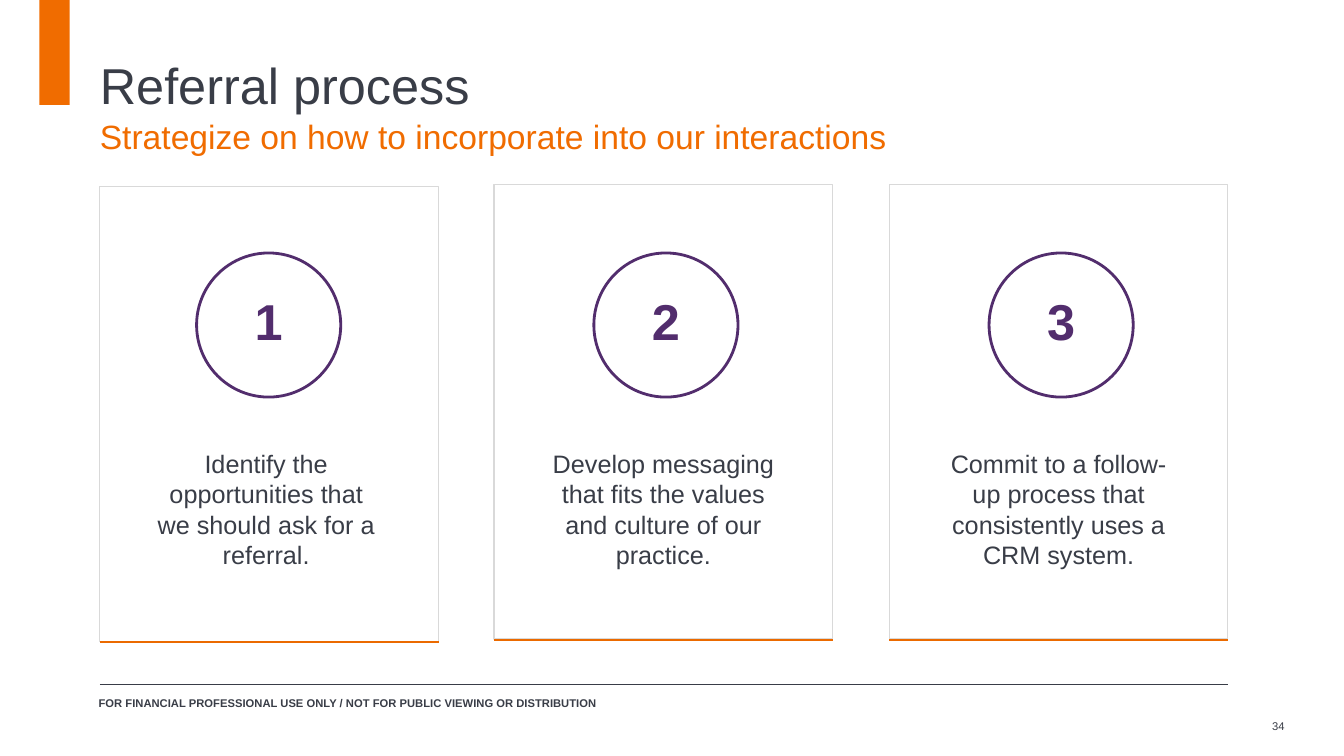
from pptx import Presentation
from pptx.dml.color import RGBColor
from pptx.enum.shapes import MSO_CONNECTOR, MSO_SHAPE
from pptx.enum.text import MSO_ANCHOR, PP_ALIGN
from pptx.oxml.ns import qn
from pptx.util import Emu, Pt
from lxml.etree import SubElement

PX = 9144
DARK, ORANGE, RULE_ORANGE = "393D47", "F06C00", "EB6A00"
PURPLE, GREY, WHITE = "522D6D", "D9D9D9", "FFFFFF"

STEPS = [
    (99, 185, 195, "Identify the opportunities that we should ask for a referral."),
    (490, 183, 589, "Develop messaging that fits the values and culture of our practice."),
    (882, 183, 981, "Commit to a follow-up process that consistently uses a CRM system."),
]


def px(*lengths):
    return [Emu(n * PX) for n in lengths]


def color(value):
    return RGBColor.from_string(value)


def add_box(s, kind, box, fill, line=None, width=0.75):
    sp = s.shapes.add_shape(kind, *px(*box))
    sp.shadow.inherit = False
    sp.fill.solid()
    sp.fill.fore_color.rgb = color(fill)
    if line:
        sp.line.color.rgb = color(line)
        sp.line.width = Pt(width)
    else:
        sp.line.fill.background()


def add_rule(s, left, right, y, line, width):
    sp = s.shapes.add_connector(MSO_CONNECTOR.STRAIGHT, *px(left, y, right, y))
    sp.line.color.rgb = color(line)
    sp.line.width = Pt(width)
    SubElement(sp._element.spPr, qn("a:effectLst"))


def add_text(s, box, text, size, fill=DARK, bold=False, align=PP_ALIGN.LEFT,
             anchor=MSO_ANCHOR.TOP, inset=(0, 0)):
    tf = s.shapes.add_textbox(*px(*box)).text_frame
    tf.word_wrap = True
    tf.vertical_anchor = anchor
    tf.margin_left = tf.margin_right = Emu(inset[0] * PX)
    tf.margin_top = tf.margin_bottom = Emu(inset[1] * PX)
    tf.text = text
    p = tf.paragraphs[0]
    p.alignment = align
    r = p.runs[0]
    r.font.name = "Arial"
    r.font.size = Pt(size)
    r.font.bold = bold
    r.font.color.rgb = color(fill)


def add_step(s, number, left, top, circle, text):
    add_box(s, MSO_SHAPE.RECTANGLE, (left, top, 336, 451), WHITE, GREY)
    add_rule(s, left, left + 336, top + 452, RULE_ORANGE, 2)
    add_box(s, MSO_SHAPE.OVAL, (circle, 251, 143, 143), WHITE, PURPLE, 2)
    add_text(s, (circle - 56, 440, 250, 131), text, 18,
             align=PP_ALIGN.CENTER, inset=(10, 5))
    add_text(s, (circle, 277, 143, 71), str(number), 36, PURPLE, True,
             PP_ALIGN.CENTER, MSO_ANCHOR.BOTTOM)


def main():
    prs = Presentation()
    prs.slide_width, prs.slide_height = px(1333, 750)
    s = prs.slides.add_slide(prs.slide_layouts[6])
    add_box(s, MSO_SHAPE.RECTANGLE, (39, 0, 30, 104), ORANGE)
    add_text(s, (99, 43, 1119, 71), "Referral process", 36,
             anchor=MSO_ANCHOR.BOTTOM)
    add_text(s, (99, 115, 1119, 39),
             "Strategize on how to incorporate into our interactions", 24, ORANGE)
    for number, step in enumerate(STEPS, 1):
        add_step(s, number, *step)
    add_rule(s, 99, 1218, 679, DARK, 0.5)
    add_text(s, (88, 686, 1147, 24),
             "FOR FINANCIAL PROFESSIONAL USE ONLY / NOT FOR PUBLIC VIEWING OR DISTRIBUTION",
             8, bold=True, inset=(10, 5))
    add_text(s, (1223, 700, 51, 40), "34", 8, align=PP_ALIGN.RIGHT,
             anchor=MSO_ANCHOR.MIDDLE)
    prs.save("out.pptx")


if __name__ == "__main__":
    main()
